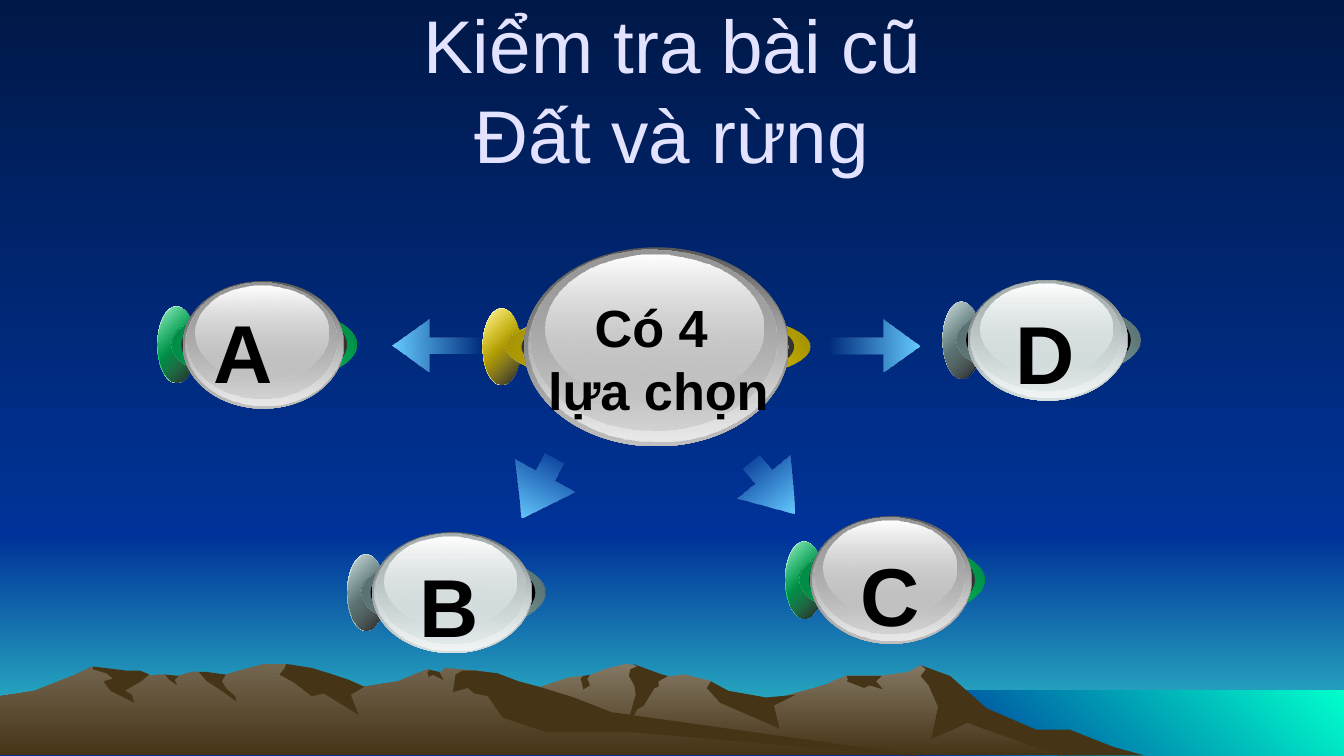
from collections import namedtuple

from pptx import Presentation
from pptx.dml.color import RGBColor
from pptx.enum.shapes import MSO_SHAPE
from pptx.enum.text import MSO_ANCHOR, PP_ALIGN
from pptx.oxml import parse_xml
from pptx.oxml.ns import nsdecls, qn
from pptx.util import Pt

BLACK = RGBColor(0x00, 0x00, 0x00)
WHITE = RGBColor(0xFF, 0xFF, 0xFF)
CHARCOAL = RGBColor(0x33, 0x33, 0x33)
NIGHT = RGBColor(0x00, 0x18, 0x47)
BLUE = RGBColor(0x00, 0x33, 0x99)
TURQUOISE = RGBColor(0x33, 0xCC, 0xCC)
SEA = RGBColor(0x00, 0xFF, 0xCC)
EARTH = RGBColor(0x46, 0x34, 0x16)
EAST_TOP = RGBColor(0x84, 0x78, 0x64)
WEST_TOP = RGBColor(0x73, 0x66, 0x4F)
LAVENDER = RGBColor(0xE3, 0xE3, 0xFF)
ARROW = RGBColor(0x66, 0xCC, 0xFF)
STEEL = RGBColor(0x83, 0xA6, 0xA7)
GREEN = RGBColor(0x00, 0xCC, 0x66)
GOLD = RGBColor(0xFC, 0xDF, 0x06)
GREY = RGBColor(0xC0, 0xC0, 0xC0)
MIST = RGBColor(0xD6, 0xE1, 0xE2)

Style = namedtuple("Style", "accent pin body")
STEEL_POD = Style(STEEL, BLACK, MIST)
GREEN_POD = Style(GREEN, CHARCOAL, GREY)
GOLD_POD = Style(GOLD, CHARCOAL, GREY)

FONT = "Arial"
WIDTH, HEIGHT = 720, 405
KNOB_W, KNOB_H = 20.2, 41
LANDSCAPE_UNIT = Pt(0.72)  # landscape points lie on a 1000 x 562 grid

EAST_RIDGE = [
    (802, 555), (778, 545), (764, 543), (723, 523), (702, 503), (685, 495), (676, 500),
    (656, 503), (629, 503), (613, 510), (566, 523), (536, 517), (529, 507), (509, 502),
    (486, 505), (474, 495), (465, 494), (450, 498), (438, 503), (424, 504), (394, 514),
    (355, 523), (327, 532), (277, 554), (262, 562), (817, 562)]
EAST_SHADOWS = [
    [(796, 543), (771, 543), (734, 527), (707, 503), (685, 495), (689, 498), (685, 503),
     (691, 510), (698, 526), (693, 550), (720, 538), (787, 562), (851, 562), (829, 556)],
    [(471, 494), (474, 496), (469, 498), (468, 503), (472, 510), (473, 517), (465, 545),
     (474, 528), (479, 525), (487, 512), (490, 511), (490, 507), (497, 503), (493, 502)],
    [(529, 507), (526, 512), (536, 523), (580, 542), (576, 525), (592, 517), (570, 519),
     (542, 514)],
    [(650, 503), (630, 503), (631, 506), (630, 507), (643, 512), (647, 510), (657, 513),
     (652, 507), (656, 503)],
    [(433, 508), (432, 505), (434, 503), (439, 502), (437, 505), (439, 510), (434, 513)]]
WEST_RIDGE = [
    (689, 562), (667, 561), (432, 534), (354, 499), (331, 497), (327, 501), (323, 501),
    (318, 498), (296, 507), (271, 511), (260, 507), (236, 510), (223, 497), (212, 494),
    (196, 494), (178, 499), (168, 502), (160, 503), (148, 500), (143, 500), (132, 503),
    (123, 502), (94, 503), (68, 496), (56, 502), (46, 506), (26, 514), (14, 516),
    (0, 518), (0, 562)]
WEST_SHADOWS = [
    [(212, 497), (208, 502), (219, 508), (232, 518), (241, 516), (267, 532), (261, 517),
     (271, 511), (260, 506), (245, 501), (232, 497), (213, 494)],
    [(370, 501), (354, 499), (344, 499), (339, 502), (337, 515), (348, 512), (353, 516),
     (363, 518), (374, 534), (407, 545), (472, 545), (670, 562), (683, 562), (455, 530),
     (427, 519), (401, 511), (386, 507)],
    [(318, 500), (320, 499), (318, 498), (327, 500), (330, 506), (322, 502), (319, 504)],
    [(154, 500), (168, 502), (165, 507), (169, 513), (175, 518), (176, 522), (165, 514),
     (154, 507), (148, 500)],
    [(133, 503), (130, 506), (132, 510), (126, 506), (123, 502)],
    [(109, 501), (111, 502), (105, 507), (93, 514), (98, 517), (100, 523), (82, 514),
     (77, 507), (84, 505), (79, 501), (69, 498), (69, 496), (94, 499), (104, 499)]]


def mix(color, target, share):
    return RGBColor(*(round(a + (b - a) * share) for a, b in zip(color, target)))


def paint(s, fill, angle=90):
    """Fill a shape with one colour, or with (colour, opacity in percent) stops."""
    s.shadow.inherit = False
    s.line.fill.background()
    if isinstance(fill, RGBColor):
        s.fill.solid()
        s.fill.fore_color.rgb = fill
        return
    s.fill.background()
    stops = "".join(
        f'<a:gs pos="{100000 * i // (len(fill) - 1)}"><a:srgbClr val="{color}">'
        f'<a:alpha val="{opacity * 1000}"/></a:srgbClr></a:gs>'
        for i, (color, opacity) in enumerate(fill))
    gradient = parse_xml(
        f'<a:gradFill {nsdecls("a")} rotWithShape="1"><a:gsLst>{stops}</a:gsLst>'
        f'<a:lin ang="{angle * 60000}" scaled="0"/></a:gradFill>')
    sp_pr = s._element.spPr
    sp_pr.replace(sp_pr.find(qn("a:noFill")), gradient)


def add_outline(shapes, points, fill, angle=90):
    builder = shapes.build_freeform(*points[0], scale=LANDSCAPE_UNIT)
    builder.add_line_segments(points[1:], close=True)
    paint(builder.convert_to_shape(), fill, angle)


def add_band(shapes, left, top, bottom, fill, angle=90):
    corners = [(left, top), (1000, top), (1000, bottom), (left, bottom)]
    add_outline(shapes, corners, fill, angle)


def add_landscape(shapes):
    add_band(shapes, 0, 400, 562, [(BLUE, 100), (TURQUOISE, 100)])
    add_band(shapes, 0, 0, 400, [(NIGHT, 100), (BLUE, 100)])
    add_band(shapes, 683, 514, 562, [(BLUE, 100), (SEA, 100)], 315)
    for ridge, top, shadows in ((EAST_RIDGE, EAST_TOP, EAST_SHADOWS),
                                (WEST_RIDGE, WEST_TOP, WEST_SHADOWS)):
        add_outline(shapes, ridge, [(top, 100), (EARTH, 100)])
        for shadow in shadows:
            add_outline(shapes, shadow, EARTH)


def add_pod(shapes, x, y, w, h, style):
    """Draw a glossy pod whose oval body fills the box; knob and ring stick out."""
    accent, pin, body = style
    group = shapes.add_group_shape()
    knob_y = y + (h - KNOB_H) / 2
    knob = (x - 0.157 * w, knob_y, KNOB_W, KNOB_H)
    ring = (x - 0.07 * w, knob_y, 1.15 * w, KNOB_H)
    ring_edge = (mix(accent, BLACK, 0.46), 100)

    def inside(dx, dy, sx, sy):
        return x + dx * w, y + dy * h, sx * w, sy * h

    layers = [
        (knob, [(WHITE, 100), (accent, 100), (WHITE, 100)], 45),
        (knob, [(accent, 32), (BLACK, 90)], 45),
        (ring, [ring_edge, (accent, 100), ring_edge], 315),
        (ring, [(mix(accent, BLACK, 0.36), 100), (accent, 0)], 45),
        ((x - 0.01 * w, knob_y, 1.03 * w, KNOB_H), pin, 0),
        ((x, y, w, h), [(mix(body, BLACK, 0.54), 100), (body, 100)], 90),
        (inside(0.015, 0.007, 0.975, 0.97), [(body, 0), (mix(body, WHITE, 0.65), 100)], 90),
        (inside(0.025, 0.01, 0.93, 0.91), [(mix(body, BLACK, 0.21), 100), (body, 48)], 90),
        (inside(0.08, 0.037, 0.825, 0.736), [(WHITE, 100), (body, 38)], 90)]
    for box, fill, angle in layers:
        s = group.shapes.add_shape(MSO_SHAPE.OVAL, *map(Pt, box))
        paint(s, fill, angle)


def add_arrow(shapes, x, y, w, h, rotation):
    s = shapes.add_shape(MSO_SHAPE.LEFT_ARROW, Pt(x), Pt(y), Pt(w), Pt(h))
    s.adjustments[0], s.adjustments[1] = 0.312, 0.715
    s.rotation = rotation
    paint(s, [(ARROW, 100), (ARROW, 0)], 0)


def add_text(shapes, x, y, w, h, lines, size, color, bold=True, wrap=False):
    tf = shapes.add_textbox(Pt(x), Pt(y), Pt(w), Pt(h)).text_frame
    tf.word_wrap = wrap
    for i, line in enumerate(lines):
        p = tf.paragraphs[0] if i == 0 else tf.add_paragraph()
        p.alignment = PP_ALIGN.CENTER
        r = p.add_run()
        r.text = line
        r.font.name, r.font.size, r.font.bold = FONT, Pt(size), bold
        r.font.color.rgb = color
    return tf


def add_choices(shapes):
    pods = [(199.4, 285.1, 85.7, 64.8, STEEL_POD), (97.9, 150.5, 86.4, 68.4, GREEN_POD),
            (280.8, 132.5, 141.8, 106.6, GOLD_POD), (518.4, 149.8, 85.7, 64.8, STEEL_POD),
            (434.2, 276.5, 86.4, 68.4, GREEN_POD)]
    for pod in pods:
        add_pod(shapes, *pod)
    arrows = [(444.2, 171.4, 48.2, 27.4, 180), (270, 243.4, 36, 36, 298.6),
              (210.2, 171.4, 48.2, 27.4, 0), (396, 243.4, 36, 36, 230.3)]
    for arrow in arrows:
        add_arrow(shapes, *arrow)
    add_text(shapes, 285.8, 154.8, 133.9, 74.9, ["Có 4 ", "lựa chọn"], 28, BLACK)
    letters = [("A", 106.8, 157.7), ("B", 217.4, 293.8), ("C", 453.6, 288), ("D", 536.4, 158.4)]
    for letter, x, y in letters:
        add_text(shapes, x, y, 46.8, 60.5, [letter], 44, BLACK)


def main():
    prs = Presentation()
    prs.slide_width, prs.slide_height = Pt(WIDTH), Pt(HEIGHT)
    slide = prs.slides.add_slide(prs.slide_layouts[6])
    slide.background.fill.solid()
    slide.background.fill.fore_color.rgb = BLUE
    add_landscape(slide.shapes)
    title = add_text(slide.shapes, 36, 13.7, 648, 67.7, ["Kiểm tra bài cũ", "Đất và rừng"],
                     40, LAVENDER, bold=False, wrap=True)
    title.vertical_anchor = MSO_ANCHOR.MIDDLE
    add_choices(slide.shapes)
    prs.save("out.pptx")


if __name__ == "__main__":
    main()
